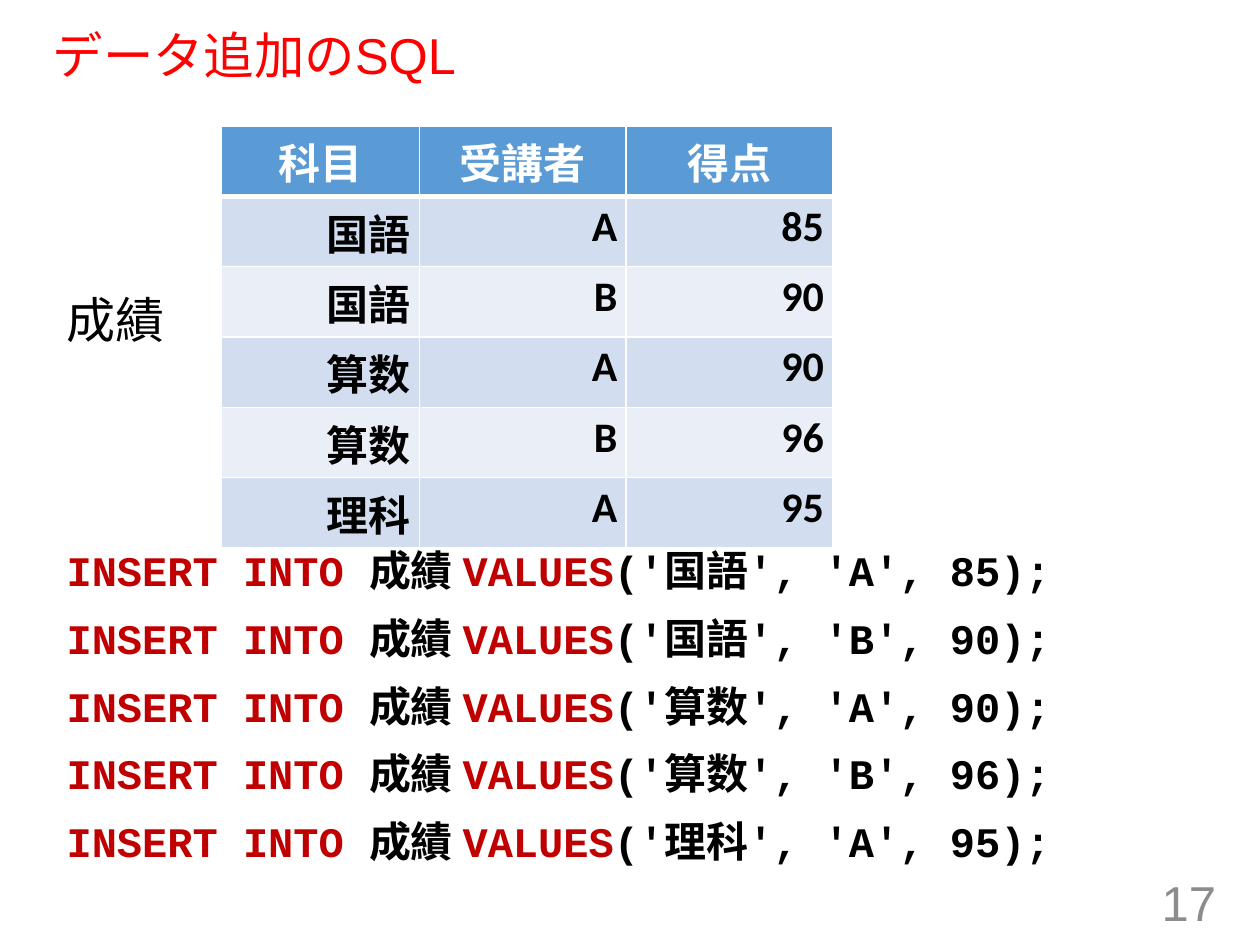
from dataclasses import dataclass

from lxml import etree
from pptx import Presentation
from pptx import util as u
from pptx.dml.color import RGBColor
from pptx.enum import text
from pptx.oxml import ns


@dataclass(frozen=True)
class Theme:
    title: str = "FF0000"
    keyword: str = "C00000"
    ink: str = "000000"
    number: str = "8C8C8C"
    white: str = "FFFFFF"
    header: str = "5B9BD5"
    bands: tuple = ("D2DEEF", "EAEFF7")
    title_size: float = 28.8
    label_size: int = 28
    body_size: int = 24
    sans: str = "Arial"
    code: str = "Courier New"
    table: str = "Calibri"


THEME = Theme()
ALIGN = text.PP_ALIGN
HEADINGS = ("科目", "受講者", "得点")
SCORES = (
    ("国語", "A", 85),
    ("国語", "B", 90),
    ("算数", "A", 90),
    ("算数", "B", 96),
    ("理科", "A", 95),
)


def set_values(target, values):
    for name, value in values.items():
        setattr(target, name, value)


def add_span(para, words, size, font, color, bold=False):
    span = para.add_run()
    span.text = words
    set_values(span.font, {"size": u.Pt(size), "name": font, "bold": bold})
    span.font.color.rgb = RGBColor.from_string(color)


def add_box(page, left, top, width, height, anchor=text.MSO_ANCHOR.TOP):
    box = page.shapes.add_textbox(*map(u.Inches, (left, top, width, height)))
    set_values(box.text_frame, {"word_wrap": True, "vertical_anchor": anchor})
    return box.text_frame


def add_label(page, place, words, size, color, anchor, align=ALIGN.LEFT, spacing=1.0):
    para = add_box(page, *place, anchor).paragraphs[0]
    set_values(para, {"alignment": align, "line_spacing": spacing})
    add_span(para, words, size, THEME.sans, color)


def add_statements(page):
    frame = add_box(page, 0.43, 4.27, 9.25, 2.7)
    for index, (subject, student, score) in enumerate(SCORES):
        para = frame.add_paragraph() if index else frame.paragraphs[0]
        para.space_before = u.Pt(10)
        parts = (
            ("INSERT INTO ", THEME.keyword),
            ("成績 ", THEME.ink),
            ("VALUES", THEME.keyword),
            (f"('{subject}', '{student}', {score});", THEME.ink),
        )
        for words, color in parts:
            add_span(para, words, THEME.body_size, THEME.code, color, bold=True)


def add_borders(cell, widths):
    properties = cell._tc.get_or_add_tcPr()
    for side, width in widths.items():
        line = etree.SubElement(properties, ns.qn(f"a:ln{side}"), w=str(u.Pt(width)))
        fill = etree.SubElement(line, ns.qn("a:solidFill"))
        etree.SubElement(fill, ns.qn("a:srgbClr"), val=THEME.white)


def fill_cell(cell, words, align, color, fill, borders):
    set_values(cell, {
        "margin_left": u.Inches(0.07), "margin_right": u.Inches(0.07),
        "margin_top": u.Inches(0.04), "margin_bottom": u.Inches(0.04),
    })
    add_borders(cell, borders)
    cell.fill.solid()
    cell.fill.fore_color.rgb = RGBColor.from_string(fill)
    para = cell.text_frame.paragraphs[0]
    para.alignment = align
    add_span(para, words, THEME.body_size, THEME.table, color, bold=True)


def add_score_table(page):
    rows = (HEADINGS, *SCORES)
    place = map(u.Inches, (1.76, 1, 4.85, 3.35))
    table = page.shapes.add_table(len(rows), len(HEADINGS), *place).table
    for column, width in zip(table.columns, (1.57, 1.64, 1.64)):
        column.width = u.Inches(width)
    for r, row in enumerate(rows):
        # The rule under the header is thicker than the others
        borders = {"L": 1, "R": 1, "T": 3 if r == 1 else 1, "B": 1 if r else 3}
        if r:
            look = (ALIGN.RIGHT, THEME.ink, THEME.bands[(r - 1) % 2])
        else:
            look = (ALIGN.CENTER, THEME.white, THEME.header)
        for c, value in enumerate(row):
            fill_cell(table.cell(r, c), str(value), *look, borders)


def main():
    deck = Presentation()
    set_values(deck, {"slide_width": u.Inches(10), "slide_height": u.Inches(7.5)})
    page = deck.slides.add_slide(deck.slide_layouts[6])
    anchor = text.MSO_ANCHOR

    # Title, page number and table name
    add_label(page, (0.32, 0.21, 9.25, 0.51), "データ追加のSQL",
              THEME.title_size, THEME.title, anchor.MIDDLE, spacing=0.9)
    add_label(page, (7.5, 6.96, 2.25, 0.4), "17",
              THEME.label_size, THEME.number, anchor.MIDDLE, ALIGN.RIGHT)
    add_label(page, (0.43, 2.25, 1.55, 0.81), "成績",
              THEME.label_size, THEME.ink, anchor.TOP)

    # SQL statements and the rows they add
    add_statements(page)
    add_score_table(page)

    deck.save("out.pptx")


if __name__ == "__main__":
    main()
